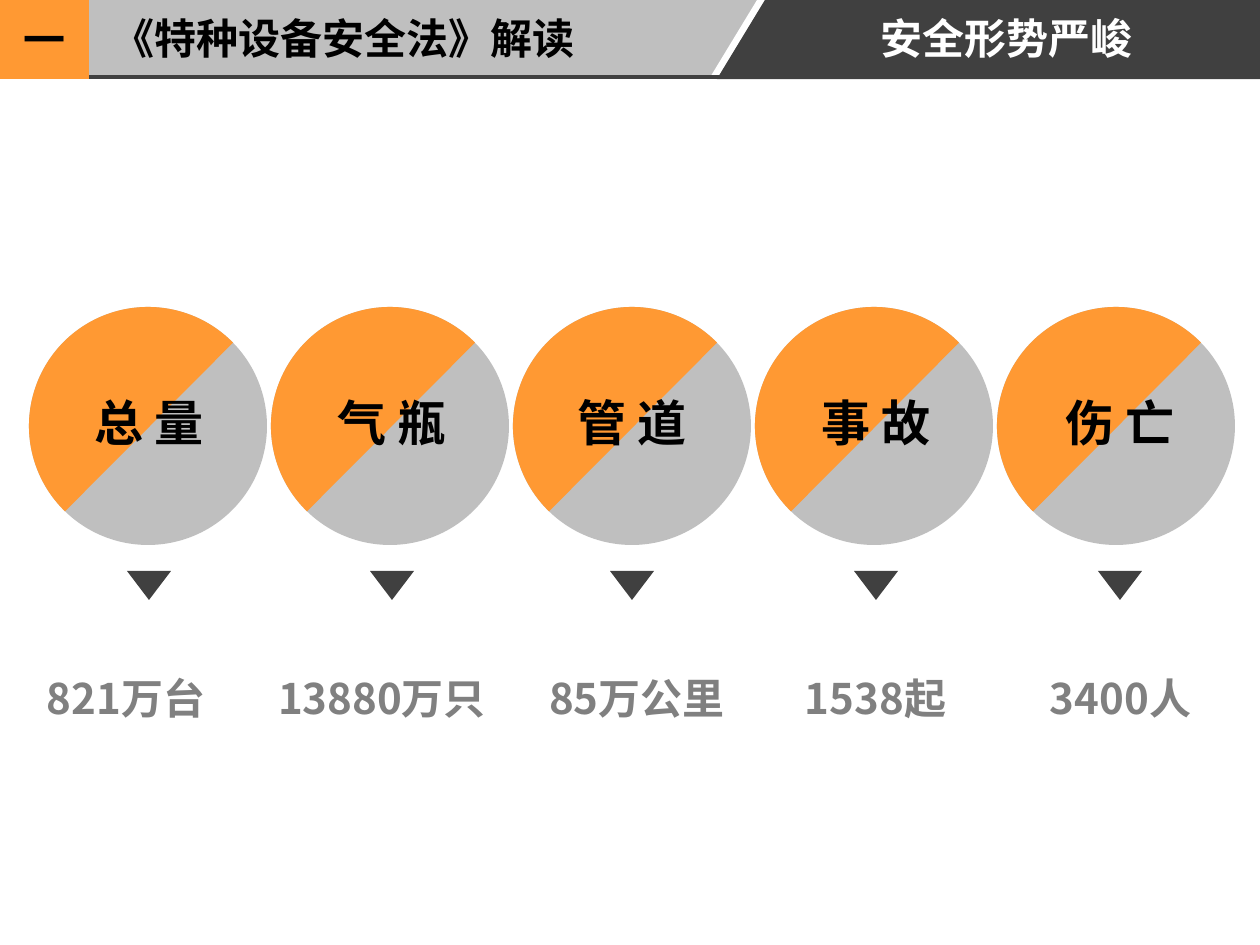
from pptx import Presentation
from pptx.dml.color import RGBColor
from pptx.enum.shapes import MSO_CONNECTOR, MSO_SHAPE
from pptx.enum.text import MSO_ANCHOR, MSO_AUTO_SIZE, PP_ALIGN
from pptx.oxml.ns import qn
from pptx.util import Emu, Pt

RECTANGLE = MSO_SHAPE.RECTANGLE
OVAL = MSO_SHAPE.OVAL
CHORD = MSO_SHAPE.CHORD
TRIANGLE = MSO_SHAPE.ISOSCELES_TRIANGLE
STRAIGHT = MSO_CONNECTOR.STRAIGHT
LEFT, CENTER = PP_ALIGN.LEFT, PP_ALIGN.CENTER
TOP = MSO_ANCHOR.TOP
NO_AUTOFIT = MSO_AUTO_SIZE.NONE

ORANGE = RGBColor(0xFF, 0x99, 0x33)
SILVER = RGBColor(0xBF, 0xBF, 0xBF)
GRAY = RGBColor(0x80, 0x80, 0x80)
DARK = RGBColor(0x40, 0x40, 0x40)
BLACK = RGBColor(0, 0, 0)
WHITE = RGBColor(0xFF, 0xFF, 0xFF)

FONT = "Noto Sans CJK SC"
EMU_PER_PX = 914400 / 126
TITLE_ONLY = 5

HEADER_HEIGHT = 79
CIRCLE_LEFT, CIRCLE_TOP, CIRCLE_SIZE, CIRCLE_PITCH = 29, 307, 238, 242
ARROW_TOP, ARROW_WIDTH, ARROW_HEIGHT = 571, 44, 29

# label, centre of label and arrow, value, left and width of the value box
STATISTICS = [
    ("总 量", 149, "821万台", 10, 232),
    ("气 瓶", 392, "13880万只", 247, 270),
    ("管 道", 632, " 85万公里", 523, 218),
    ("事 故", 876, "1538起", 762, 227),
    ("伤 亡", 1120, "3400人", 1012, 217),
]


def px(length):
    return Emu(round(length * EMU_PER_PX))


def paint(shape, color):
    shape.shadow.inherit = False
    shape.fill.solid()
    shape.fill.fore_color.rgb = color
    shape.line.fill.background()


def add_filled(shapes, kind, left, top, width, height, color):
    shape = shapes.add_shape(kind, px(left), px(top), px(width), px(height))
    paint(shape, color)
    return shape


def add_polygon(shapes, points, color):
    builder = shapes.build_freeform(*points[0], scale=EMU_PER_PX)
    builder.add_line_segments(points[1:], close=True)
    paint(builder.convert_to_shape(), color)


def write_text(shape, text, size=24, color=BLACK, align=LEFT, wrap=True):
    frame = shape.text_frame
    frame.word_wrap = wrap
    frame.auto_size = NO_AUTOFIT
    frame.vertical_anchor = TOP
    paragraph = frame.paragraphs[0]
    paragraph.alignment = align
    run = paragraph.add_run()
    run.text = text
    run.font.name = FONT
    run.font.size = Pt(size)
    run.font.bold = True
    run.font.color.rgb = color
    east_asian = run.font._element.makeelement(qn("a:ea"), {"typeface": FONT})
    run.font._element.find(qn("a:latin")).addnext(east_asian)


def add_text(shapes, text, left, top, width, height, **text_format):
    box = shapes.add_textbox(px(left), px(top), px(width), px(height))
    write_text(box, text, **text_format)


def place_title(slide, text, left, top, width, height):
    """Move the title placeholder above the header bars and fill it."""
    title = slide.shapes.title
    title.left, title.top = px(left), px(top)
    title.width, title.height = px(width), px(height)
    write_text(title, text, wrap=False)
    slide.shapes._spTree.append(title._element)


def add_header(slide):
    shapes = slide.shapes
    add_filled(shapes, RECTANGLE, 0, 0, 1260, HEADER_HEIGHT, SILVER)
    add_filled(shapes, RECTANGLE, 0, 0, 89, HEADER_HEIGHT, ORANGE)
    add_polygon(shapes, [(757, 0), (765, 0), (717, HEADER_HEIGHT),
                         (709, HEADER_HEIGHT)], WHITE)
    add_polygon(shapes, [(765, 0), (1260, 0), (1260, HEADER_HEIGHT),
                         (717, HEADER_HEIGHT)], DARK)
    rule = shapes.add_connector(STRAIGHT, px(89), px(77), px(732), px(77))
    rule.line.color.rgb = DARK
    rule.line.width = Pt(2)
    properties = rule._element.spPr
    properties.append(properties.makeelement(qn("a:effectLst"), {}))

    add_text(shapes, "一", 11, 7, 68, 64, wrap=False)
    place_title(slide, "《特种设备安全法》解读", 100, 6, 494, 64)
    add_text(shapes, "安全形势严峻", 868, 6, 277, 63, color=WHITE)


def add_circle(shapes, left):
    """Add a grey disc whose upper-left half is orange."""
    group = shapes.add_group_shape()
    frame = (left, CIRCLE_TOP, CIRCLE_SIZE, CIRCLE_SIZE)
    add_filled(group.shapes, OVAL, *frame, SILVER)
    half = add_filled(group.shapes, CHORD, *frame, ORANGE)
    half.adjustments[0] = 53.13
    half.adjustments[1] = 162
    half.rotation = 45.6


def add_arrow(shapes, center):
    arrow = add_filled(shapes, TRIANGLE, center - ARROW_WIDTH // 2, ARROW_TOP,
                       ARROW_WIDTH, ARROW_HEIGHT, DARK)
    arrow._element.spPr.find(qn("a:xfrm")).set("flipV", "1")


def main():
    presentation = Presentation()
    presentation.slide_width, presentation.slide_height = px(1260), px(945)
    slide = presentation.slides.add_slide(presentation.slide_layouts[TITLE_ONLY])
    shapes = slide.shapes
    add_header(slide)
    for index, (label, center, value, left, width) in enumerate(STATISTICS):
        add_circle(shapes, CIRCLE_LEFT + index * CIRCLE_PITCH)
        add_text(shapes, label, center - CIRCLE_SIZE // 2, 386, CIRCLE_SIZE, 72,
                 size=28, align=CENTER)
        add_arrow(shapes, center)
        add_text(shapes, value, left, 666, width, 64, color=GRAY, align=CENTER)
    presentation.save("out.pptx")


if __name__ == "__main__":
    main()
